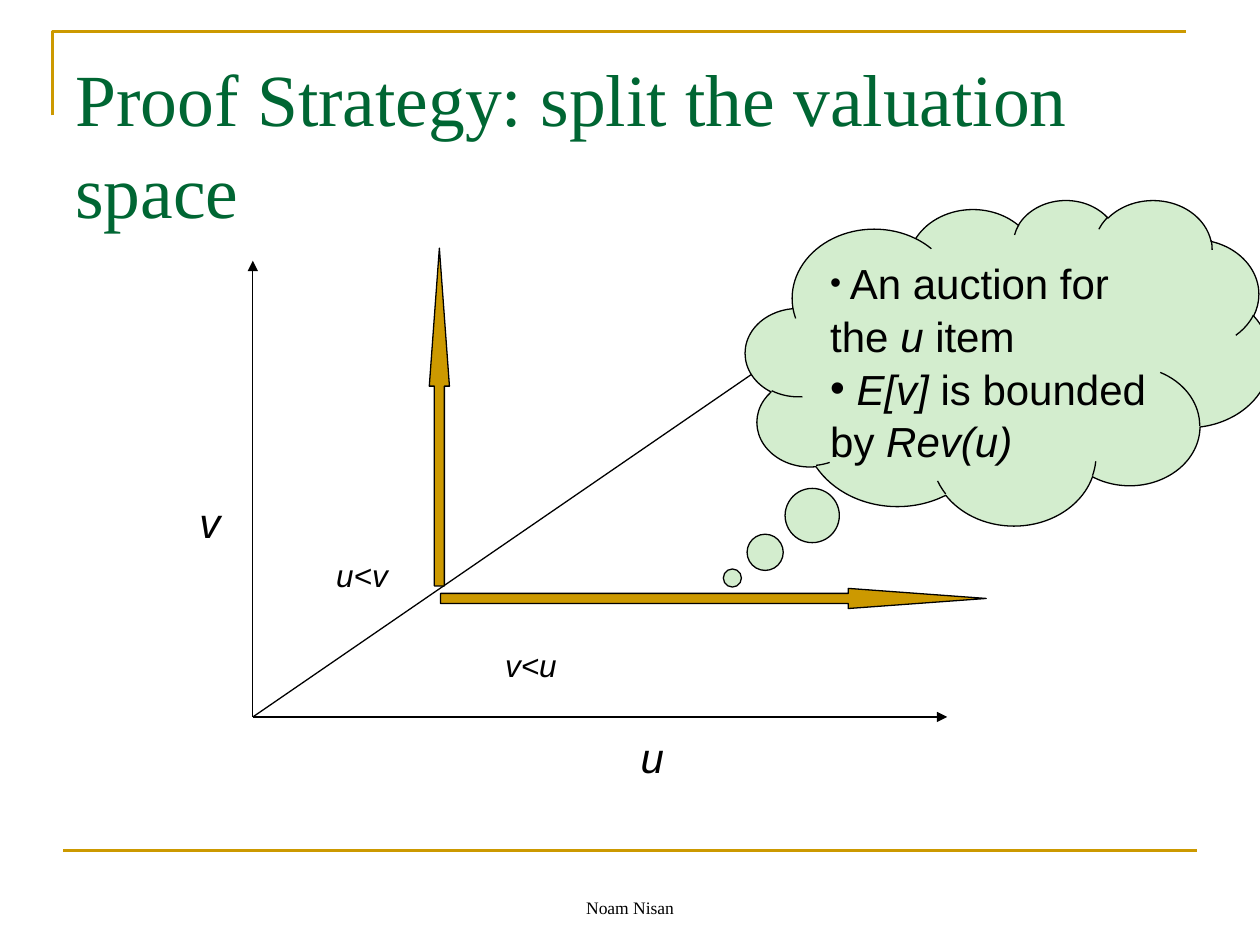
from lxml import etree
from pptx import Presentation
from pptx import util as u
from pptx.dml.color import RGBColor
from pptx.enum import shapes, text
from pptx.oxml.ns import qn

Pt = u.Pt
GOLD, GREEN, MINT, BLACK = "CC9900", "006633", "D3EDCE", "000000"
SANS, SERIF = "Arial", "Times New Roman"
LINE_SPACING = 1.05


def color(value):
    return RGBColor.from_string(value)


def add_run(paragraph, words, size=24, font=SANS, fill=BLACK, italic=False):
    run = paragraph.add_run()
    run.text = words
    run.font.size = Pt(size)
    run.font.name = font
    run.font.italic = italic
    run.font.color.rgb = color(fill)


def add_text(slide, box, words, align=text.PP_ALIGN.LEFT,
             anchor=text.MSO_ANCHOR.TOP, margin_left=7.2, margin_top=3.6,
             **run_format):
    frame = slide.shapes.add_textbox(*map(Pt, box)).text_frame
    frame.word_wrap = True
    frame.vertical_anchor = anchor
    frame.margin_left, frame.margin_top = Pt(margin_left), Pt(margin_top)
    paragraph = frame.paragraphs[0]
    paragraph.alignment = align
    paragraph.line_spacing = LINE_SPACING
    add_run(paragraph, words, **run_format)


def add_line(slide, start, end, stroke=BLACK, width=0.75, arrow=False):
    line = slide.shapes.add_connector(
        shapes.MSO_CONNECTOR.STRAIGHT, *map(Pt, (*start, *end)))
    line.line.color.rgb = color(stroke)
    line.line.width = Pt(width)
    properties = line._element.spPr
    if arrow:
        etree.SubElement(properties.find(qn("a:ln")), qn("a:tailEnd"), type="triangle")
    etree.SubElement(properties, qn("a:effectLst"))


def add_filled_shape(slide, kind, box, fill, adjustments):
    shape = slide.shapes.add_shape(kind, *map(Pt, box))
    shape.shadow.inherit = False
    shape.fill.solid()
    shape.fill.fore_color.rgb = color(fill)
    shape.line.color.rgb = color(BLACK)
    shape.line.width = Pt(0.75)
    for index, value in enumerate(adjustments):
        shape.adjustments[index] = value
    return shape


def draw_frame(slide, box):
    """Draw the gold corner at the top left and the gold rule at the bottom."""
    left, top, width, height = box
    builder = slide.shapes.build_freeform(Pt(left), Pt(top + 48))
    builder.add_line_segments(
        [(Pt(left), Pt(top)), (Pt(left + width), Pt(top))], close=False)
    corner = builder.convert_to_shape()
    corner.shadow.inherit = False
    corner.fill.background()
    corner.line.color.rgb = color(GOLD)
    corner.line.width = Pt(1.5)
    bottom = top + height
    add_line(slide, (left + 6, bottom), (left + 6 + width, bottom), GOLD, 1.5)


def draw_valuation_space(slide, box):
    """Draw the axes, the diagonal u = v, the region labels and two rays."""
    left, top, width, height = box
    bottom = top + height
    origin = (left, bottom)
    add_line(slide, origin, (left, top), arrow=True)
    add_line(slide, origin, (left + width, bottom), arrow=True)
    add_line(slide, origin, (left + 379.5, top))

    labels = [
        ("v", 24, (-34, -131, 22.5, 36.7)),
        ("u", 24, (219, 3.6, 23, 36.7)),
        ("v<u", 18, (101.5, -45.4, 79.2, 28.8)),
        ("u<v", 18, (5, -96.5, 79.2, 28.8)),
    ]
    for words, size, (x, y, label_width, label_height) in labels:
        add_text(slide, (left + x, bottom + y, label_width, label_height), words,
                 align=text.PP_ALIGN.RIGHT, margin_left=0, size=size, italic=True)

    thickness = 11.5
    rays = [  # centre, length, rotation
        ((263.2, -67.7), 311.8, 0),
        ((106.6, -171.4), 193, 270),
    ]
    for (x, y), length, rotation in rays:
        ray_box = (left + x - length / 2, bottom + y - thickness / 2,
                   length, thickness)
        ray = add_filled_shape(slide, shapes.MSO_SHAPE.RIGHT_ARROW, ray_box,
                               GOLD, (0.5, 6.85))
        ray.rotation = rotation


def draw_thought(slide, box):
    cloud = add_filled_shape(slide, shapes.MSO_SHAPE.CLOUD_CALLOUT, box, MINT,
                             (-0.525, 0.663))
    frame = cloud.text_frame
    frame.word_wrap = True
    frame.vertical_anchor = text.MSO_ANCHOR.TOP
    points = [
        [(" ", {"size": 18}), ("An auction for the ", {}),
         ("u", {"italic": True}), (" item", {})],
        [(" ", {}), ("E[v] ", {"italic": True}), ("is bounded by ", {}),
         ("Rev(u)", {"italic": True})],
    ]
    for index, runs in enumerate(points):
        paragraph = frame.add_paragraph() if index else frame.paragraphs[0]
        paragraph.alignment = text.PP_ALIGN.LEFT
        paragraph.line_spacing = LINE_SPACING
        properties = paragraph._p.get_or_add_pPr()
        etree.SubElement(properties, qn("a:buFont"), typeface=SANS)
        etree.SubElement(properties, qn("a:buChar"), char="•")
        for words, run_format in runs:
            add_run(paragraph, words, **run_format)


def main():
    presentation = Presentation()
    presentation.slide_width, presentation.slide_height = Pt(720), Pt(540)
    slide = presentation.slides.add_slide(presentation.slide_layouts[6])
    draw_frame(slide, (30, 18, 648, 468))
    add_text(slide, (246, 492, 228, 36), "Noam Nisan", align=text.PP_ALIGN.CENTER,
             anchor=text.MSO_ANCHOR.BOTTOM, size=10, font=SERIF)
    add_text(slide, (36, 21.6, 666, 90), "Proof Strategy: split the valuation space",
             margin_top=6, size=42, font=SERIF, fill=GREEN)
    draw_valuation_space(slide, (144.5, 149, 396.8, 260.7))
    draw_thought(slide, (426, 114, 300, 186))
    presentation.save("out.pptx")


if __name__ == "__main__":
    main()
